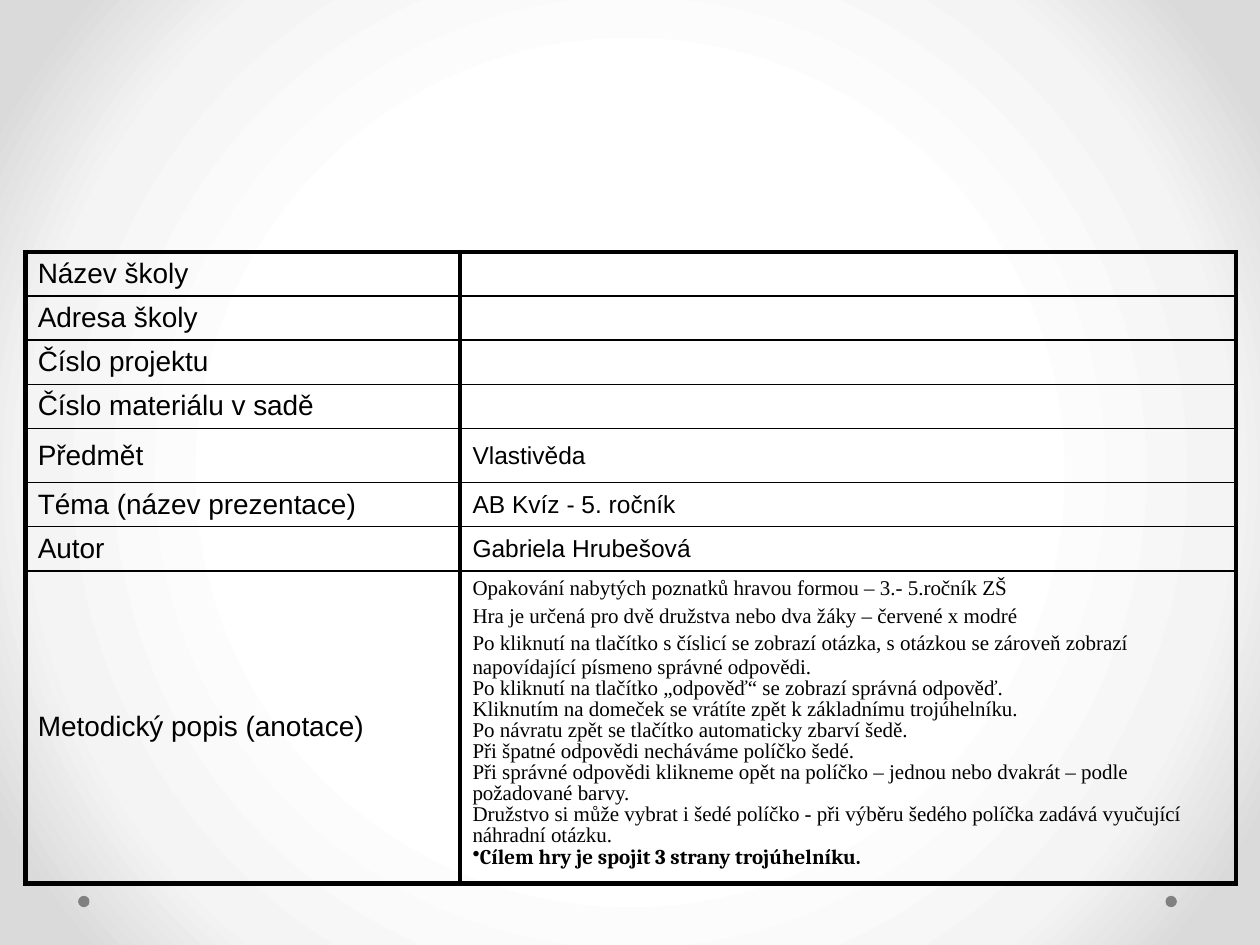
import pptx
import pptx.dml.color
import pptx.enum.shapes
import pptx.enum.text
import pptx.oxml
import pptx.oxml.ns
import pptx.util
from lxml import etree
from pptx.util import Inches

BLACK = pptx.dml.color.RGBColor(0x00, 0x00, 0x00)
GRAY = pptx.dml.color.RGBColor(0x80, 0x80, 0x80)
BACKGROUND_STOPS = [
    (50, pptx.dml.color.RGBColor(0xFF, 0xFF, 0xFF)),
    (76, pptx.dml.color.RGBColor(0xF4, 0xF4, 0xF4)),
    (92, pptx.dml.color.RGBColor(0xDA, 0xDA, 0xDA)),
]

ROWS = [
    ("Název školy", "", 0.35),
    ("Adresa školy", "", 0.35),
    ("Číslo projektu", "", 0.35),
    ("Číslo materiálu v sadě", "", 0.35),
    ("Předmět", "Vlastivěda", 0.43),
    ("Téma (název prezentace)", "AB Kvíz - 5. ročník", 0.35),
    ("Autor", "Gabriela Hrubešová", 0.35),
    ("Metodický popis (anotace)", "", 2.48),
]
SPACED_NOTES = [
    "Opakování nabytých poznatků hravou formou – 3.- 5.ročník ZŠ",
    "Hra je určená pro dvě družstva nebo dva žáky – červené x modré",
    "Po kliknutí na tlačítko s číslicí se zobrazí otázka, s otázkou se zároveň "
    "zobrazí napovídající písmeno správné odpovědi.",
]
TIGHT_NOTES = [
    "Po kliknutí na tlačítko „odpověď“ se zobrazí správná odpověď.",
    "Kliknutím na domeček se vrátíte zpět k základnímu trojúhelníku.",
    "Po návratu zpět se tlačítko automaticky zbarví šedě.",
    "Při špatné odpovědi necháváme políčko šedé.",
    "Při správné odpovědi klikneme opět na políčko – jednou nebo dvakrát – "
    "podle požadované barvy.",
    "Družstvo si může vybrat i šedé políčko - při výběru šedého políčka zadává "
    "vyučující náhradní otázku.",
    "Cílem hry je spojit 3 strany trojúhelníku.",
]


def set_font(paragraph, name, size, bold=False):
    font = paragraph.font
    font.name = name
    font.size = pptx.util.Pt(size)
    font.bold = bold
    font.color.rgb = BLACK


def add_border(cell, side, width):
    """Draw one black cell edge; side is L, R, T or B, width is in points."""
    cell._tc.get_or_add_tcPr().append(pptx.oxml.parse_xml(
        f'<a:ln{side} {pptx.oxml.ns.nsdecls("a")} w="{pptx.util.Pt(width)}">'
        f'<a:solidFill><a:srgbClr val="{BLACK}"/></a:solidFill></a:ln{side}>'))


presentation = pptx.Presentation()
presentation.slide_width = Inches(10)
presentation.slide_height = Inches(7.5)
slide = presentation.slides.add_slide(presentation.slide_layouts[6])

# Radial background
stops = "".join(
    f'<a:gs pos="{position * 1000}"><a:srgbClr val="{color}"/></a:gs>'
    for position, color in BACKGROUND_STOPS)
slide.element.cSld.insert(0, pptx.oxml.parse_xml(
    f'<p:bg {pptx.oxml.ns.nsdecls("p", "a")}><p:bgPr><a:gradFill rotWithShape="1">'
    f'<a:gsLst>{stops}</a:gsLst><a:path path="circle">'
    '<a:fillToRect l="50000" t="50000" r="50000" b="50000"/></a:path>'
    '</a:gradFill><a:effectLst/></p:bgPr></p:bg>'))

# Footer dots
for left in (9.25, 0.62):
    dot = slide.shapes.add_shape(
        pptx.enum.shapes.MSO_SHAPE.OVAL,
        Inches(left), Inches(7.11), Inches(0.09), Inches(0.09))
    dot.shadow.inherit = False
    dot.fill.solid()
    dot.fill.fore_color.rgb = GRAY
    dot.line.fill.background()

# Material description table
table = slide.shapes.add_table(
    len(ROWS), 2, Inches(0.2), Inches(2), Inches(9.61),
    Inches(sum(height for _, _, height in ROWS))).table
table.first_row = False
table.horz_banding = False
table.columns[0].width = Inches(3.45)
table.columns[1].width = Inches(6.16)
last_row = len(ROWS) - 1

for row, (label, value, height) in enumerate(ROWS):
    table.rows[row].height = Inches(height)
    for column, (text, size) in enumerate([(label, 16), (value, 14)]):
        cell = table.cell(row, column)
        add_border(cell, "L", 3)
        add_border(cell, "R", 3)
        add_border(cell, "T", 3 if row == 0 else 1)
        add_border(cell, "B", 3 if row == last_row else 1)
        cell.fill.background()
        cell.vertical_anchor = pptx.enum.text.MSO_ANCHOR.MIDDLE
        cell.text = text
        paragraph = cell.text_frame.paragraphs[0]
        set_font(paragraph, "Arial", size)
        if not text:
            # An empty cell takes its height from the end-of-paragraph size
            end = etree.SubElement(paragraph._p, pptx.oxml.ns.qn("a:endParaRPr"))
            end.set("sz", str(size * 100))

# Method notes
notes_cell = table.cell(last_row, 1)
notes_cell.vertical_anchor = pptx.enum.text.MSO_ANCHOR.TOP
notes_cell.text = "\n".join(SPACED_NOTES + TIGHT_NOTES)
paragraphs = notes_cell.text_frame.paragraphs
for paragraph in paragraphs[1:len(SPACED_NOTES)]:
    paragraph.space_before = pptx.util.Pt(2.4)
for paragraph in paragraphs[len(SPACED_NOTES):]:
    paragraph.line_spacing = 0.9

goal = paragraphs[-1]
bullet = etree.SubElement(goal._p.get_or_add_pPr(), pptx.oxml.ns.qn("a:buChar"))
bullet.set("char", "•")
for paragraph in paragraphs[:-1]:
    set_font(paragraph, "Times New Roman", 12)
set_font(goal, "Cambria", 12, bold=True)

presentation.save("out.pptx")
